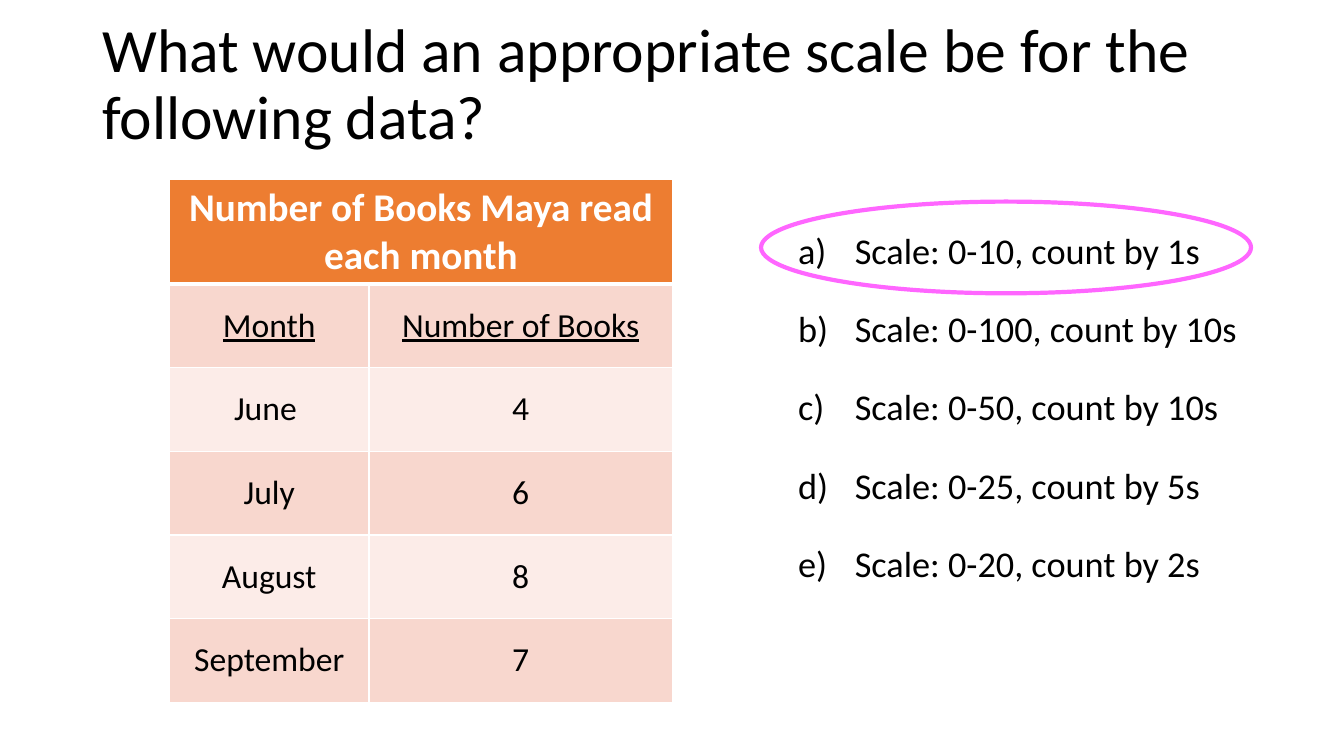
from dataclasses import dataclass

from lxml.etree import SubElement
from pptx import Presentation
from pptx.dml.color import RGBColor
from pptx.enum.shapes import MSO_SHAPE as Shape
from pptx.enum.text import MSO_ANCHOR as Anchor, PP_ALIGN as Align
from pptx.oxml.ns import qn
from pptx.util import Pt

BLACK = RGBColor(0x00, 0x00, 0x00)
WHITE = RGBColor(0xFF, 0xFF, 0xFF)
ORANGE = RGBColor(0xED, 0x7D, 0x31)
PEACH = RGBColor(0xF8, 0xD7, 0xCE)
PALE_PEACH = RGBColor(0xFC, 0xEC, 0xE8)
PINK = RGBColor(0xFF, 0x66, 0xFF)

QUESTION = "What would an appropriate scale be for the following data?"
HEADING = "Number of Books Maya read each month"
BOOKS = [
    ("Month", "Number of Books"),
    ("June ", "4"),
    ("July", "6"),
    ("August", "8"),
    ("September", "7"),
]
SCALES = [(10, 1), (100, 10), (50, 10), (25, 5), (20, 2)]
COLUMN_WIDTHS = (142.6, 216.7)
HEADING_HEIGHT, ROW_HEIGHT = 74.6, 59.8
CHOICE_INDENT = 40.5


@dataclass(frozen=True)
class Box:
    left: float
    top: float
    width: float
    height: float

    def lengths(self) -> tuple:
        return Pt(self.left), Pt(self.top), Pt(self.width), Pt(self.height)


@dataclass(frozen=True)
class Style:
    size: float
    color: RGBColor = BLACK
    bold: bool = False
    underline: bool = False


TITLE_STYLE = Style(44)
CHOICE_STYLE = Style(25.9)
HEADING_STYLE = Style(28, WHITE, bold=True)
LABEL_STYLE = Style(24, underline=True)
VALUE_STYLE = Style(24)


def write(paragraph, text: str, style: Style, layout: dict) -> None:
    run = paragraph.add_run()
    run.text = text
    formats = {"name": "Calibri", "size": Pt(style.size),
               "bold": style.bold, "underline": style.underline}
    for name, value in formats.items():
        setattr(run.font, name, value)
    run.font.color.rgb = style.color
    for name, value in layout.items():
        setattr(paragraph, name, value)


def add_text_frame(slide, box: Box, anchor):
    frame = slide.shapes.add_textbox(*box.lengths()).text_frame
    frame.word_wrap = True
    frame.vertical_anchor = anchor
    return frame


def add_letter(paragraph) -> None:
    """Number the paragraph a), b), c) with a hanging indent."""
    properties = paragraph._p.get_or_add_pPr()
    properties.set("marL", str(Pt(CHOICE_INDENT)))
    properties.set("indent", str(-Pt(CHOICE_INDENT)))
    SubElement(properties, qn("a:buFont"), typeface="+mj-lt")
    SubElement(properties, qn("a:buAutoNum"), type="alphaLcParenR")


def set_borders(cell, top: float, bottom: float) -> None:
    properties = cell._tc.get_or_add_tcPr()
    widths = {"L": 1, "R": 1, "T": top, "B": bottom}
    for position, (side, width) in enumerate(widths.items()):
        line = SubElement(properties, qn(f"a:ln{side}"), w=str(Pt(width)))
        fill = SubElement(line, qn("a:solidFill"))
        SubElement(fill, qn("a:srgbClr"), val=str(WHITE))
        properties.insert(position, line)


def fill_cell(cell, text: str, style: Style, color: RGBColor, anchor) -> None:
    cell.fill.solid()
    cell.fill.fore_color.rgb = color
    cell.vertical_anchor = anchor
    write(cell.text_frame.paragraphs[0], text, style, {"alignment": Align.CENTER})


def add_books_table(slide, box: Box) -> None:
    table = slide.shapes.add_table(len(BOOKS) + 1, 2, *box.lengths()).table
    for column, width in zip(table.columns, COLUMN_WIDTHS):
        column.width = Pt(width)
    for index, row in enumerate(table.rows):
        row.height = Pt(ROW_HEIGHT if index else HEADING_HEIGHT)
        for cell in row.cells:
            set_borders(cell, top=3 if index == 1 else 1, bottom=1 if index else 3)

    heading = table.cell(0, 0)
    heading.merge(table.cell(0, 1))
    fill_cell(heading, HEADING, HEADING_STYLE, ORANGE, Anchor.TOP)
    for row, entries in enumerate(BOOKS, start=1):
        style = LABEL_STYLE if row == 1 else VALUE_STYLE
        color = PEACH if row % 2 else PALE_PEACH
        for column, text in enumerate(entries):
            fill_cell(table.cell(row, column), text, style, color, Anchor.MIDDLE)


def add_choices(slide, box: Box) -> None:
    frame = add_text_frame(slide, box, Anchor.TOP)
    for index, (end, step) in enumerate(SCALES):
        choice = frame.add_paragraph() if index else frame.paragraphs[0]
        write(choice, f"Scale: 0-{end}, count by {step}s", CHOICE_STYLE,
              {"line_spacing": 1.5, "space_before": Pt(9.25)})
        add_letter(choice)


def add_answer_ring(slide, box: Box) -> None:
    ring = slide.shapes.add_shape(Shape.OVAL, *box.lengths())
    ring.shadow.inherit = False
    ring.fill.background()
    ring.line.color.rgb = PINK
    ring.line.width = Pt(3)


def main() -> None:
    deck = Presentation()
    deck.slide_width, deck.slide_height = Pt(960), Pt(540)
    slide = deck.slides.add_slide(deck.slide_layouts[6])

    # Question
    question = add_text_frame(slide, Box(66, 9.4, 828, 104.4), Anchor.MIDDLE)
    write(question.paragraphs[0], QUESTION, TITLE_STYLE, {"line_spacing": 0.9})

    # Answer choices, data table and ring around the right answer
    add_choices(slide, Box(563, 144, 331.2, 342.7))
    add_books_table(slide, Box(121, 128.2, sum(COLUMN_WIDTHS), 373.6))
    add_answer_ring(slide, Box(543.6, 144, 350, 65.5))

    deck.save("out.pptx")


if __name__ == "__main__":
    main()
